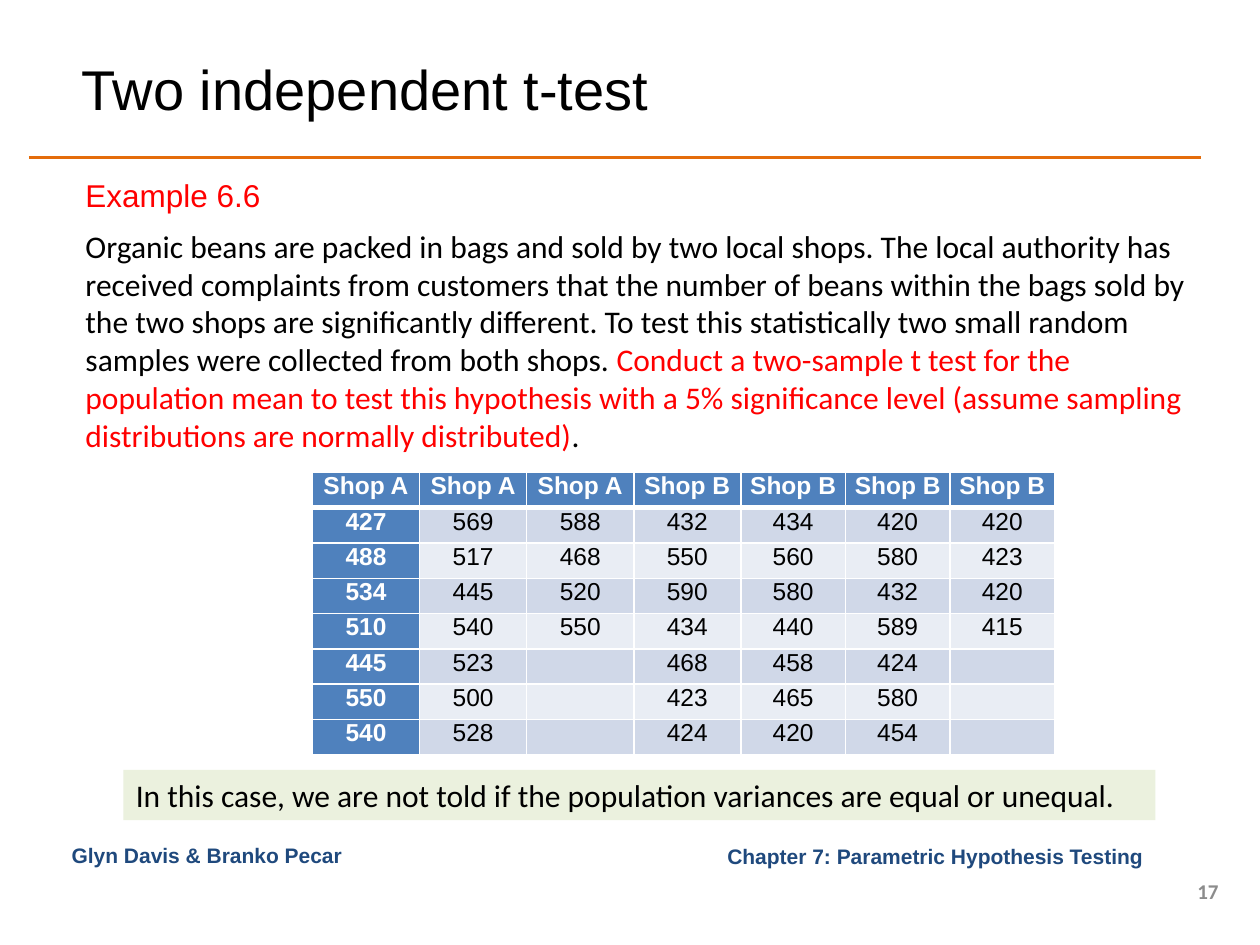
from lxml import etree
from pptx import Presentation
from pptx import util as u
from pptx.dml.color import RGBColor
from pptx.enum import shapes, text
from pptx.oxml.ns import qn

BLACK, WHITE, RED, NAVY, BLUE = "000000", "FFFFFF", "FF0000", "1F497D", "4F81BD"
LEFT, CENTER, RIGHT = text.PP_ALIGN.LEFT, text.PP_ALIGN.CENTER, text.PP_ALIGN.RIGHT
TOP, MIDDLE = text.MSO_ANCHOR.TOP, text.MSO_ANCHOR.MIDDLE


def rgb(value):
    return RGBColor.from_string(value)


def write(tf, runs, size, name, bold=False, align=LEFT):
    """Fill the first paragraph with (text, colour) runs."""
    p = tf.paragraphs[0]
    p.alignment = align
    for content, color in runs:
        r = p.add_run()
        r.text = content
        for key, value in {"size": u.Pt(size), "name": name, "bold": bold}.items():
            setattr(r.font, key, value)
        r.font.color.rgb = rgb(color)


prs = Presentation()
prs.slide_width, prs.slide_height = u.Inches(10), u.Inches(7.5)
s = prs.slides.add_slide(prs.slide_layouts[6])

# Rule under the title
line = s.shapes.add_connector(shapes.MSO_CONNECTOR.STRAIGHT, u.Inches(0.23),
                              u.Inches(1.25), u.Inches(9.53), u.Inches(1.25))
line.line.color.rgb = rgb("E46C0A")
line.line.width = u.Pt(2)
etree.SubElement(line._element.spPr, qn("a:effectLst"))

# Title, footers, page number and body text
body = [
    ("Organic beans are packed in bags and sold by two local shops. The local "
     "authority has received complaints from customers that the number of beans "
     "within the bags sold by the two shops are significantly different. To test "
     "this statistically two small random samples were collected from both shops. ", BLACK),
    ("Conduct a two-sample t test for the population mean to test this hypothesis "
     "with a 5% significance level (assume sampling distributions are normally "
     "distributed)", RED),
    (".", BLACK),
]
boxes = [
    ((3.75, 6.64, 5.47, 0.31), [("Chapter 7: Parametric Hypothesis Testing ", NAVY)],
     12, "Arial", True, RIGHT, MIDDLE, True),
    ((0.55, 0.31, 8.96, 0.78), [("Two independent t-test", BLACK)],
     32, "Arial", False, LEFT, MIDDLE, True),
    ((9.3, 6.95, 0.47, 0.24), [("17", "8C8C8C")], 12, "Calibri", True, RIGHT, MIDDLE, True),
    ((0.47, 6.64, 2.97, 0.31), [("Glyn Davis & Branko Pecar", NAVY)],
     12, "Arial", True, LEFT, TOP, True),
    ((0.58, 1.75, 8.99, 1.92), body, 18, "Calibri", False, LEFT, TOP, True),
    ((0.58, 1.35, 1.6, 0.4), [("Example 6.6", RED)], 18, "Arial", False, LEFT, TOP, False),
]
for place, runs, size, name, bold, align, anchor, wrap in boxes:
    tf = s.shapes.add_textbox(*map(u.Inches, place)).text_frame
    for key, value in {"word_wrap": wrap, "vertical_anchor": anchor}.items():
        setattr(tf, key, value)
    write(tf, runs, size, name, bold, align)

# Sample table
rows = [
    ["Shop A"] * 3 + ["Shop B"] * 4,
    ["427", "569", "588", "432", "434", "420", "420"],
    ["488", "517", "468", "550", "560", "580", "423"],
    ["534", "445", "520", "590", "580", "432", "420"],
    ["510", "540", "550", "434", "440", "589", "415"],
    ["445", "523", "", "468", "458", "424", ""],
    ["550", "500", "", "423", "465", "580", ""],
    ["540", "528", "", "424", "420", "454", ""],
]
table = s.shapes.add_table(len(rows), len(rows[0]), u.Inches(2.48), u.Inches(3.75),
                           u.Inches(5.9), u.Inches(2.24)).table
table.first_col = True
for j, col in enumerate(table.columns):
    col.width = u.Inches(0.85 if j < 4 else 0.83)
for i, values in enumerate(rows):
    table.rows[i].height = u.Inches(0.28)
    for j, value in enumerate(values):
        cell = table.cell(i, j)
        head = i == 0 or j == 0
        margins = {"margin_left": 0.07, "margin_right": 0.07,
                   "margin_top": 0, "margin_bottom": 0}
        for key, inset in margins.items():
            setattr(cell, key, u.Inches(inset))
        if value:
            write(cell.text_frame, [(value, WHITE if head else BLACK)],
                  14, "Arial", head, CENTER)
        else:  # keeps an empty cell from stretching its row
            etree.SubElement(cell.text_frame.paragraphs[0]._p,
                             qn("a:endParaRPr"), sz="1400")
        # White borders, heavier around the header's lower edge
        tcPr = cell._tc.get_or_add_tcPr()
        for side in "LRTB":
            heavy = (i, side) in ((0, "B"), (1, "T"))
            ln = etree.SubElement(tcPr, qn("a:ln" + side), w=str(u.Pt(3 if heavy else 1)))
            fill = etree.SubElement(ln, qn("a:solidFill"))
            etree.SubElement(fill, qn("a:srgbClr"), val=WHITE)
        cell.fill.solid()
        cell.fill.fore_color.rgb = rgb(BLUE if head else "D0D8E8" if i % 2 else "E9EDF4")

# Closing remark
sp = s.shapes.add_shape(shapes.MSO_SHAPE.RECTANGLE,
                        *map(u.Inches, (0.98, 6.11, 8.19, 0.4)))
sp.shadow.inherit = False
sp.fill.solid()
sp.fill.fore_color.rgb = rgb("EBF1DE")
sp.line.fill.background()
sp.text_frame.word_wrap = True
sp.text_frame.vertical_anchor = TOP
write(sp.text_frame, [("In this case, we are not told if the population variances "
                       "are equal or unequal.", BLACK)],
      18, "Calibri", align=text.PP_ALIGN.JUSTIFY)

prs.save("out.pptx")
